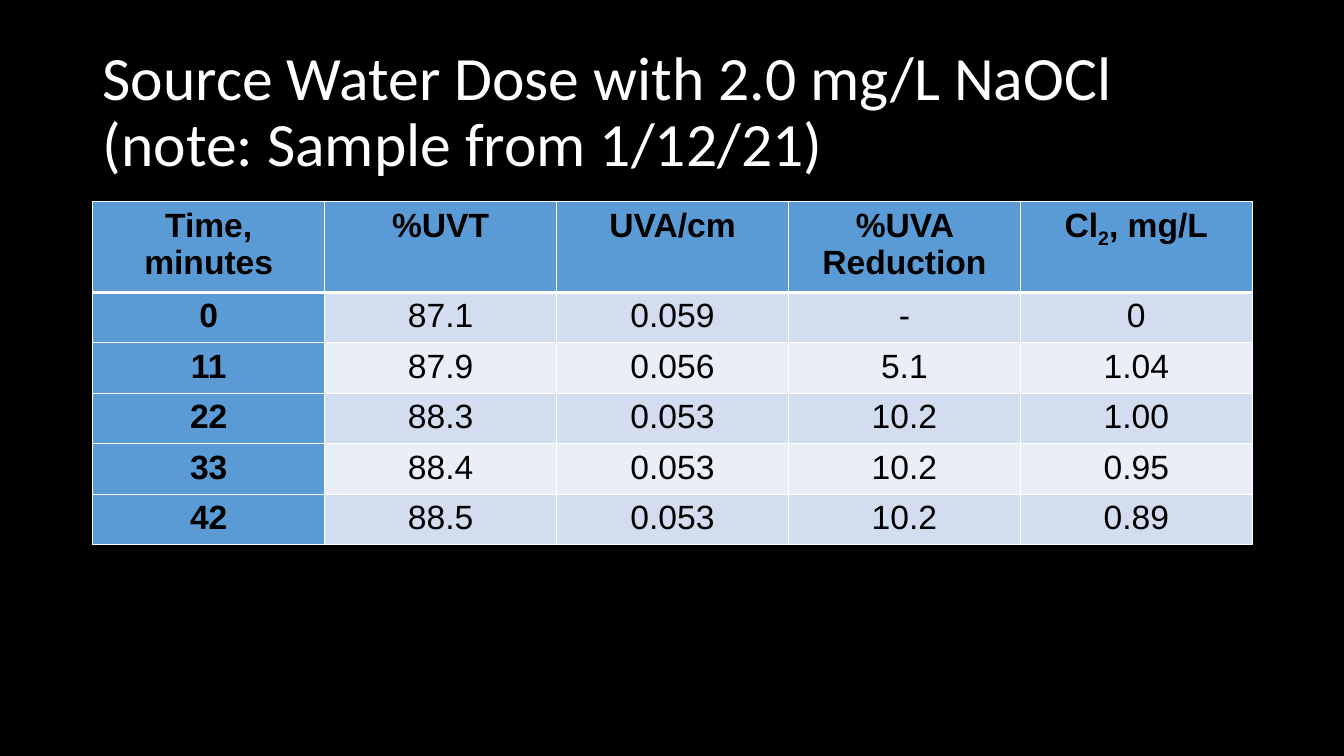
from lxml.etree import SubElement
from pptx import Presentation
from pptx.dml.color import RGBColor as Color
from pptx.enum.text import MSO_ANCHOR as Anchor, PP_ALIGN as Align
from pptx.oxml.ns import qn
from pptx.util import Inches, Pt

COLORS = {
    "background": "000000",
    "title": "FFFFFF",
    "text": "000000",
    "border": "FFFFFF",
    "header": "5B9BD5",
    "odd": "D2DEEF",
    "even": "EAEFF7",
}

HEADINGS = ["Time, minutes", "%UVT", "UVA/cm", "%UVA Reduction", ("Cl", "2", ", mg/L")]
READINGS = [
    ["0", "87.1", "0.059", "-", "0"],
    ["11", "87.9", "0.056", "5.1", "1.04"],
    ["22", "88.3", "0.053", "10.2", "1.00"],
    ["33", "88.4", "0.053", "10.2", "0.95"],
    ["42", "88.5", "0.053", "10.2", "0.89"],
]


class DoseSlide:
    """Holds the style and the current slide, and draws its elements."""

    title_font = "Calibri"
    table_font = "Arial"

    def __init__(self, presentation):
        self.slide = presentation.slides.add_slide(presentation.slide_layouts[6])
        fill = self.slide.background.fill
        fill.solid()
        fill.fore_color.rgb = Color.from_string(COLORS["background"])

    def style(self, font, name, size, color, bold=False):
        font.name = name
        font.size = Pt(size)
        font.bold = bold
        font.color.rgb = Color.from_string(COLORS[color])

    def title(self, lines, left, top, width, height):
        box = self.slide.shapes.add_textbox(
            Inches(left), Inches(top), Inches(width), Inches(height))
        frame = box.text_frame
        frame.word_wrap = True
        frame.vertical_anchor = Anchor.MIDDLE
        paragraph = frame.paragraphs[0]
        paragraph.line_spacing = 0.9
        for index, line in enumerate(lines):
            if index:
                paragraph.add_line_break()
            run = paragraph.add_run()
            run.text = line
            self.style(run.font, self.title_font, 44, "title")

    def table(self, rows, left, top, width, header_height, row_height):
        height = header_height + row_height * (len(rows) - 1)
        table = self.slide.shapes.add_table(
            len(rows), len(rows[0]),
            Inches(left), Inches(top), Inches(width), Inches(height)).table
        table.first_col = True
        for column in table.columns:
            column.width = Inches(width / len(rows[0]))
        for row_index, values in enumerate(rows):
            table.rows[row_index].height = Inches(row_height if row_index else header_height)
            for column_index, value in enumerate(values):
                self.cell(table.cell(row_index, column_index), value, row_index, column_index)

    def cell(self, cell, value, row_index, column_index):
        heading = row_index == 0 or column_index == 0
        self.borders(cell, row_index)
        cell.fill.solid()
        band = "header" if heading else "odd" if row_index % 2 else "even"
        cell.fill.fore_color.rgb = Color.from_string(COLORS[band])
        paragraph = cell.text_frame.paragraphs[0]
        paragraph.alignment = Align.CENTER
        parts = value if isinstance(value, tuple) else (value,)
        for index, part in enumerate(parts):
            run = paragraph.add_run()
            run.text = part
            self.style(run.font, self.table_font, 24, "text", heading)
            if index == 1:
                run.font._element.set("baseline", "-25000")

    def borders(self, cell, row_index):
        properties = cell._tc.get_or_add_tcPr()
        widths = {
            "a:lnL": 1,
            "a:lnR": 1,
            "a:lnT": 3 if row_index == 1 else 1,
            "a:lnB": 3 if row_index == 0 else 1,
        }
        for tag, width in widths.items():
            line = SubElement(properties, qn(tag), w=str(Pt(width)))
            fill = SubElement(line, qn("a:solidFill"))
            SubElement(fill, qn("a:srgbClr"), val=COLORS["border"])


def main():
    presentation = Presentation()
    presentation.slide_width = Inches(13.33)
    presentation.slide_height = Inches(7.5)
    slide = DoseSlide(presentation)
    slide.title(["Source Water Dose with 2.0 mg/L NaOCl", "(note: Sample from 1/12/21)"],
                0.92, 0.4, 11.5, 1.45)
    slide.table([HEADINGS] + READINGS, 0.92, 2, 11.5, 0.84, 0.47)
    presentation.save("out.pptx")


if __name__ == "__main__":
    main()
